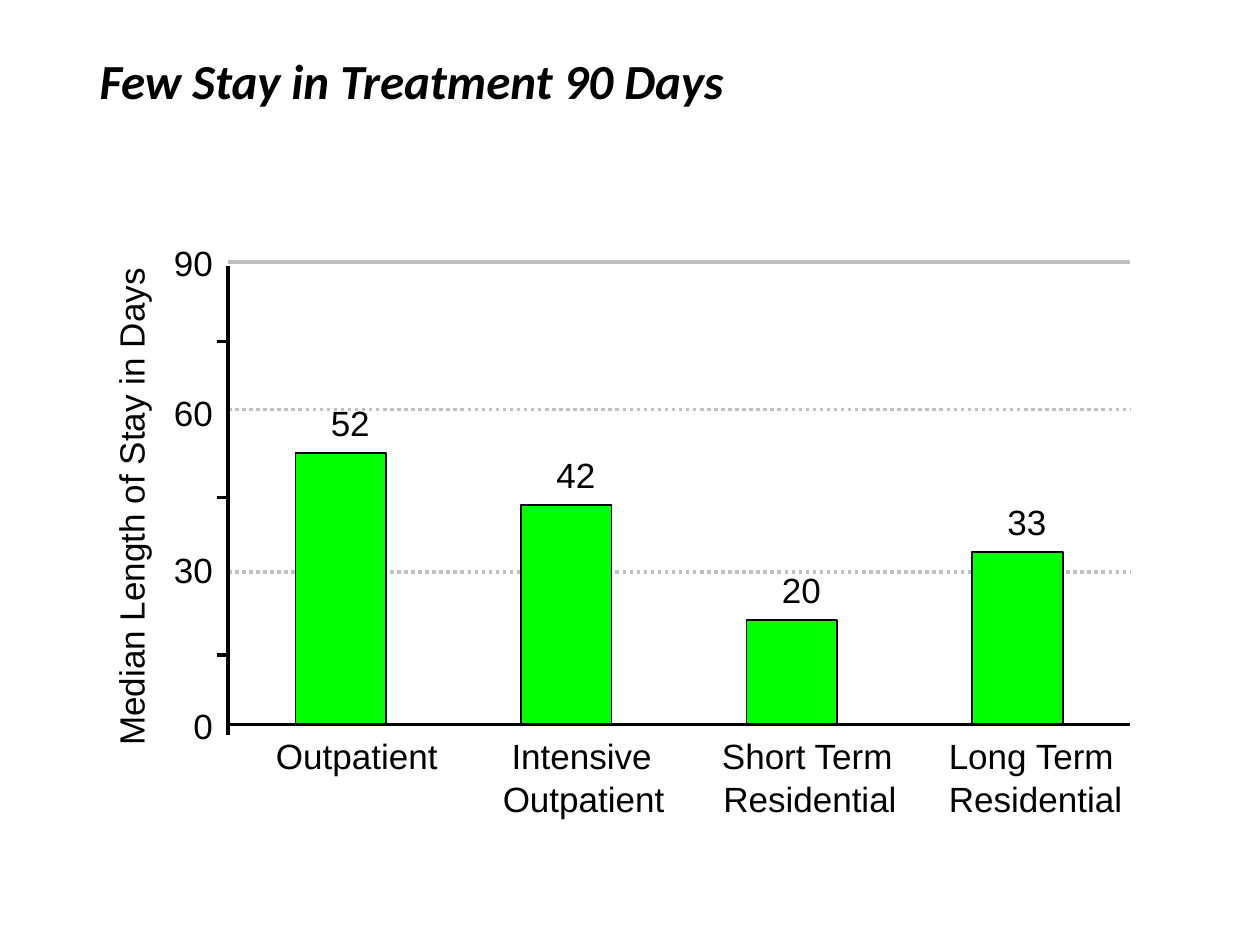
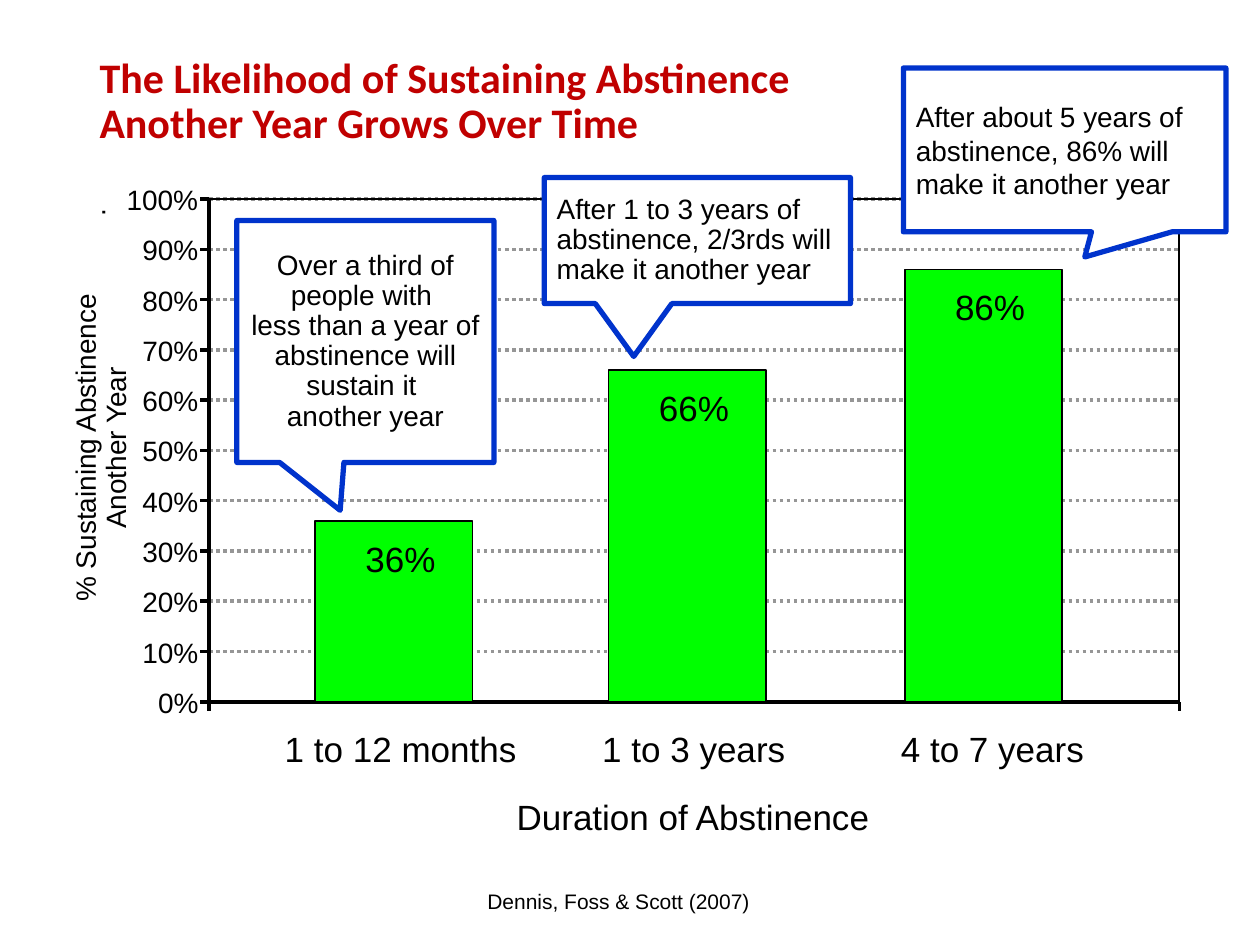
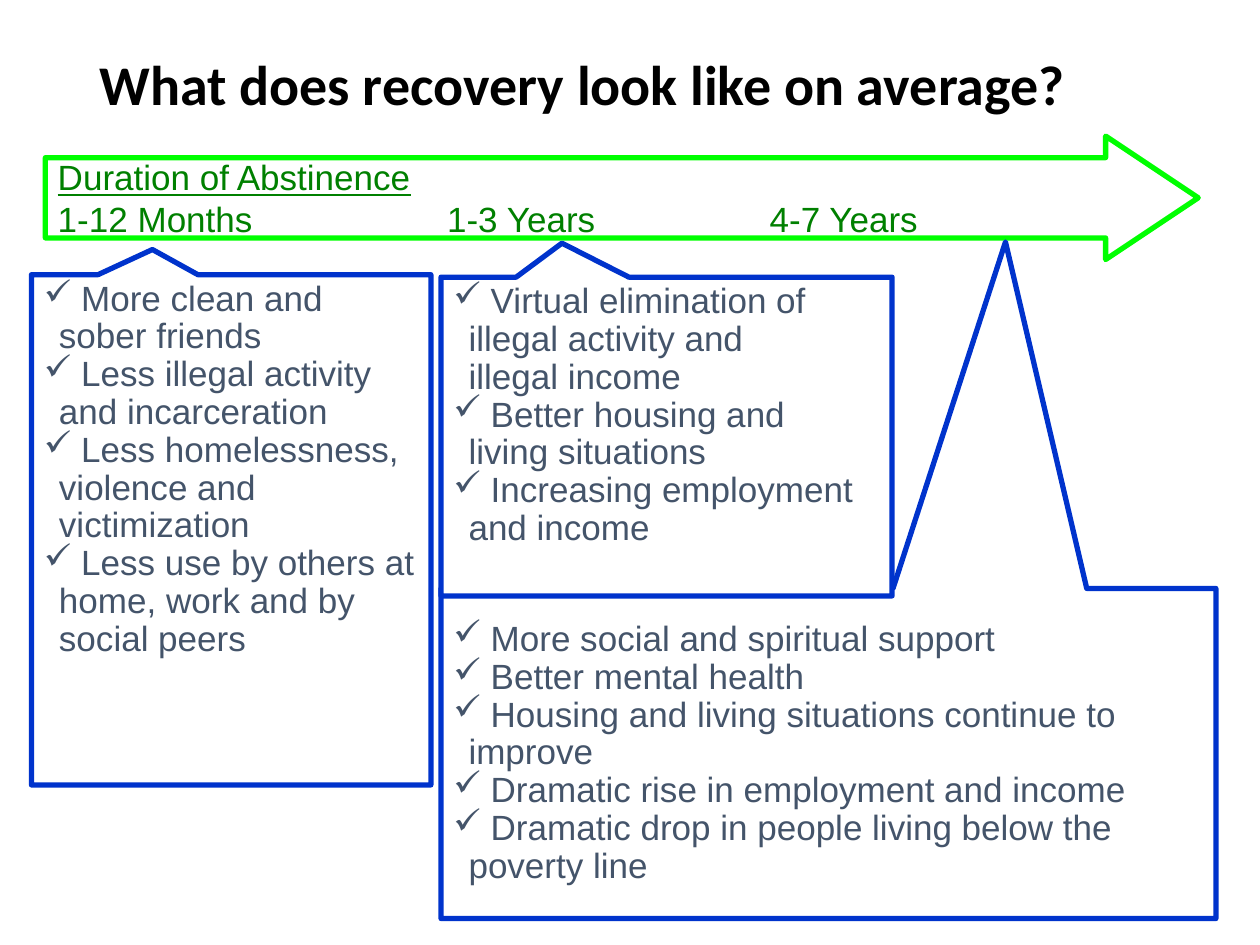
from lxml import etree
from pptx import Presentation
from pptx.dml.color import RGBColor
from pptx.enum.dml import MSO_LINE
from pptx.enum.shapes import MSO_CONNECTOR, MSO_SHAPE
from pptx.enum.text import MSO_ANCHOR, MSO_AUTO_SIZE, PP_ALIGN
from pptx.oxml.ns import qn
from pptx.util import Inches, Pt

COLORS = {
    "black": "000000", "white": "FFFFFF", "bar": "00FF00", "callout": "0033CC",
    "light_grid": "C0C0C0", "grid": "969696", "red": "C00000",
    "green_text": "008000", "slate": "44546A",
}
TITLE_BOX = (0.69, 0.4, 8.62, 1.45)
BODY_FONT = "Arial"
TITLE_FONT = "Calibri"

# Length of stay: left and right edge, baseline and height of the 90-day scale
STAY_PLOT = {"left": 1.81, "right": 8.97, "base": 5.75, "height": 3.73, "top": 2.11}
STAY_BAR_WIDTH = 0.72
STAY_GRID = [(4.54, True), (3.25, True), (2.08, False)]  # top, dotted
STAY_TICKS = [5.2, 3.95, 2.71]
STAY_SCALE = [("0", 5.59), ("30", 4.35), ("60", 3.11), ("90", 1.92)]
STAY_DAYS = [52, 42, 20, 33]
STAY_CATEGORIES = [  # one list per bar: text, left, width
    [("Outpatient", 2.19, 1.29)],
    [("Intensive", 4.06, 1.12), ("Outpatient", 3.99, 1.29)],
    [("Short Term", 5.73, 1.36), ("Residential", 5.74, 1.39)],
    [("Long Term", 7.53, 1.32), ("Residential", 7.53, 1.39)],
]

# Likelihood of abstinence
ODDS_PLOT = {"left": 1.66, "right": 9.36, "base": 5.57, "height": 3.99, "top": 1.58}
ODDS_BAR_WIDTH = 1.25
ODDS_BARS = [(36, 2.5), (66, 4.83), (86, 7.18)]  # percent, left
ODDS_LABELS = [
    ("1 to 12 months", 2.26, 5.77, 1.85),
    ("1 to 3 years", 4.78, 5.77, 1.46),
    ("4 to 7 years", 7.15, 5.77, 1.46),
    ("Duration of Abstinence", 4.1, 6.31, 2.82),
]
ODDS_CALLOUTS = [  # box, tail tip, paragraphs, alignment, line spacing
    ((4.32, 1.41, 2.43, 1), (5.03, 2.83),
     ["After 1 to 3 years of abstinence, 2/3rds will make it another year"],
     PP_ALIGN.LEFT, 0.9),
    ((7.17, 0.54, 2.56, 1.3), (8.61, 2.04),
     ["After about 5 years of abstinence, 86% will make it another year"],
     PP_ALIGN.LEFT, 1.0),
    ((1.88, 1.75, 2.04, 1.92), (2.7, 4.05),
     ["Over a third of people with ",
      "less than a year of abstinence will sustain it ", "another year"],
     PP_ALIGN.CENTER, 0.9),
]

# Recovery
DURATION_ARROW = (0.36, 1.08, 9.15, 0.98)
DURATION_TABS = (3.09, 5.65)
RECOVERY_CALLOUTS = [  # box, tail tip, anchor, bullets
    ((3.5, 4.67, 6.15, 2.62), (7.98, 1.92), MSO_ANCHOR.MIDDLE,
     ["More social and spiritual support", "Better mental health",
      "Housing and living situations continue to improve",
      "Dramatic rise in employment and income",
      "Dramatic drop in people living below the poverty line"]),
    ((3.5, 2.2, 3.58, 2.53), (4.46, 1.93), MSO_ANCHOR.TOP,
     ["Virtual elimination of\nillegal activity and\nillegal income",
      "Better housing and\nliving situations", "Increasing employment and income"]),
    ((0.25, 2.18, 3.17, 4.05), (1.21, 1.98), MSO_ANCHOR.TOP,
     ["More clean and sober friends", "Less illegal activity and incarceration",
      "Less homelessness,\nviolence and\nvictimization",
      "Less use by others at home, work and by social peers"]),
]


def color(name):
    return RGBColor.from_string(COLORS[name])


def inches(values):
    return [Inches(value) for value in values]


def add_text(paragraph, text, size, color_name="black", font=BODY_FONT,
             bold=False, italic=False, underline=False):
    for index, line in enumerate(text.split("\n")):
        if index:
            paragraph.add_line_break()
        run = paragraph.add_run()
        run.text = line
        run.font.name = font
        run.font.size = Pt(size)
        run.font.bold = bold
        run.font.italic = italic
        run.font.underline = underline
        run.font.color.rgb = color(color_name)


def add_paragraphs(frame, texts, size, color_name="black",
                   alignment=PP_ALIGN.LEFT, spacing=1.0):
    for index, text in enumerate(texts):
        paragraph = frame.add_paragraph() if index else frame.paragraphs[0]
        paragraph.alignment = alignment
        paragraph.line_spacing = spacing
        add_text(paragraph, text, size, color_name)


def add_titled_slide(presentation, text, size, color_name="black", italic=False):
    slide = presentation.slides.add_slide(presentation.slide_layouts[5])
    title = slide.shapes.title
    title.left, title.top, title.width, title.height = inches(TITLE_BOX)
    frame = title.text_frame
    frame.auto_size = MSO_AUTO_SIZE.NONE
    frame.vertical_anchor = MSO_ANCHOR.TOP
    paragraph = frame.paragraphs[0]
    paragraph.alignment = PP_ALIGN.LEFT
    paragraph.line_spacing = 0.9
    add_text(paragraph, text, size, color_name, TITLE_FONT, bold=True, italic=italic)
    return slide


def add_label(shapes, texts, box, size=20, rotation=0,
              alignment=PP_ALIGN.LEFT, spacing=1.0):
    """Add a text box without insets that fits its text."""
    label = shapes.add_textbox(*inches(box))
    label.rotation = rotation
    frame = label.text_frame
    frame.margin_left = frame.margin_right = frame.margin_top = frame.margin_bottom = 0
    frame.word_wrap = False
    frame.auto_size = MSO_AUTO_SIZE.SHAPE_TO_FIT_TEXT
    add_paragraphs(frame, texts, size, alignment=alignment, spacing=spacing)


def add_line(slide, start, end, color_name="black", dotted=False):
    line = slide.shapes.add_connector(MSO_CONNECTOR.STRAIGHT, *inches(start + end))
    line.line.color.rgb = color(color_name)
    line.line.width = Pt(0)
    if dotted:
        line.line.dash_style = MSO_LINE.ROUND_DOT
    etree.SubElement(line._element.spPr, qn("a:effectLst"))


def add_box(shapes, kind, box, fill, line, width):
    shape = shapes.add_shape(kind, *inches(box))
    shape.shadow.inherit = False
    if fill:
        shape.fill.solid()
        shape.fill.fore_color.rgb = color(fill)
    else:
        shape.fill.background()
    shape.line.color.rgb = color(line)
    shape.line.width = Pt(width)
    return shape


def add_callout(slide, box, tip, anchor):
    """Add a box whose tail ends at tip, and return its text frame."""
    callout = add_box(slide.shapes, MSO_SHAPE.RECTANGULAR_CALLOUT, box,
                      "white", "callout", 3)
    left, top, width, height = box
    callout.adjustments[0] = (tip[0] - left) / width - 0.5
    callout.adjustments[1] = (tip[1] - top) / height - 0.5
    callout.text_frame.word_wrap = True
    callout.text_frame.vertical_anchor = anchor
    return callout.text_frame


def set_tabs(paragraph, positions):
    tab_list = etree.SubElement(paragraph._p.get_or_add_pPr(), qn("a:tabLst"))
    for position in positions:
        etree.SubElement(tab_list, qn("a:tab"), pos=str(Inches(position)), algn="l")


def set_check_bullet(paragraph):
    properties = paragraph._p.get_or_add_pPr()
    properties.set("marL", str(Inches(0.12)))
    properties.set("indent", str(-Inches(0.12)))
    etree.SubElement(properties, qn("a:buChar"), char="✓")


def build_stay_slide(presentation):
    slide = add_titled_slide(presentation, "Few Stay in Treatment 90 Days", 28, italic=True)
    left, right, base = STAY_PLOT["left"], STAY_PLOT["right"], STAY_PLOT["base"]
    for top, dotted in STAY_GRID:
        add_line(slide, (left, top), (right, top), "light_grid", dotted)
    for top in STAY_TICKS:
        add_line(slide, (left - 0.09, top), (left, top))

    pitch = (right - left) / len(STAY_DAYS)
    for index, days in enumerate(STAY_DAYS):
        height = STAY_PLOT["height"] * days / 90
        bar_left = left + pitch * (index + 0.5) - STAY_BAR_WIDTH / 2
        add_box(slide.shapes, MSO_SHAPE.RECTANGLE,
                (bar_left, base - height, STAY_BAR_WIDTH, height), "bar", "black", 0.88)
        add_label(slide.shapes, [str(days)],
                  (bar_left + 0.28, base - height - 0.41, 0.31, 0.34))
    add_line(slide, (left, STAY_PLOT["top"]), (left, base + 0.08))
    add_line(slide, (left, base), (right, base))

    for text, top in STAY_SCALE:
        width = 0.155 * len(text)
        add_label(slide.shapes, [text], (1.69 - width, top, width, 0.34))
    for lines in STAY_CATEGORIES:
        for row, (text, label_left, width) in enumerate(lines):
            add_label(slide.shapes, [text], (label_left, 5.83 + 0.34 * row, width, 0.34))
    add_label(slide.shapes, ["Median Length of Stay in Days"],
              (-0.87, 3.84, 3.82, 0.34), rotation=270)


def build_odds_slide(presentation):
    slide = add_titled_slide(
        presentation,
        "The Likelihood of Sustaining Abstinence \nAnother Year Grows Over Time", 24, "red")
    left, right, base, plot_height, plot_top = (
        ODDS_PLOT[key] for key in ("left", "right", "base", "height", "top"))
    levels = [(percent, base - plot_height * percent / 100) for percent in range(0, 101, 10)]
    for _, top in levels[1:]:
        add_line(slide, (left, top), (right, top), "grid", dotted=True)
    add_box(slide.shapes, MSO_SHAPE.RECTANGLE,
            (left, plot_top, right - left, plot_height), None, "black", 1)
    add_line(slide, (left, plot_top), (left, base))
    add_line(slide, (left, base), (right, base))
    for edge in (left, right):
        add_line(slide, (edge, base + 0.07), (edge, base))
    for percent, top in levels:
        add_line(slide, (left - 0.07, top), (left, top))
        text = f"{percent}%"
        width = 0.2 + 0.125 * (len(text) - 1)
        add_label(slide.shapes, [text], (1.58 - width, top - 0.13, width, 0.27), 16)

    for percent, bar_left in ODDS_BARS:
        height = plot_height * percent / 100
        group = slide.shapes.add_group_shape()
        add_box(group.shapes, MSO_SHAPE.RECTANGLE,
                (bar_left, base - height, ODDS_BAR_WIDTH, height), "bar", "black", 1)
        add_label(group.shapes, [f"{percent}%"],
                  (bar_left + 0.4, base - height + 0.13, 0.56, 0.34))
    for text, label_left, top, width in ODDS_LABELS:
        add_label(slide.shapes, [text], (label_left, top, width, 0.34))
    add_label(slide.shapes, ["% Sustaining Abstinence", "Another Year"],
              (-0.42, 3.31, 2.47, 0.49), 16, 270, PP_ALIGN.CENTER, 0.9)
    add_label(slide.shapes, ["."], (0.72, 1.55, 0.06, 0.27), 16, 270)

    for box, tip, texts, alignment, spacing in ODDS_CALLOUTS:
        frame = add_callout(slide, box, tip, MSO_ANCHOR.MIDDLE)
        add_paragraphs(frame, texts, 16, alignment=alignment, spacing=spacing)
    citation = slide.shapes.add_textbox(*inches((3.77, 7, 3.4, 0.3))).text_frame
    citation.word_wrap = True
    add_paragraphs(citation, ["Dennis, Foss & Scott (2007)"], 12)


def build_recovery_slide(presentation):
    slide = add_titled_slide(presentation, "What does recovery look like on average?", 32)
    arrow = add_box(slide.shapes, MSO_SHAPE.RIGHT_ARROW, DURATION_ARROW, "white", "bar", 3)
    arrow.adjustments[0] = 0.65
    arrow.adjustments[1] = 0.75
    frame = arrow.text_frame
    frame.word_wrap = True
    frame.vertical_anchor = MSO_ANCHOR.MIDDLE
    heading, periods = frame.paragraphs[0], frame.add_paragraph()
    heading.alignment = periods.alignment = PP_ALIGN.LEFT
    add_text(heading, "Duration of Abstinence", 20, "green_text", underline=True)
    add_text(periods, "1-12 Months\t1-3 Years\t4-7 Years", 20, "green_text")
    set_tabs(periods, DURATION_TABS)

    for box, tip, anchor, bullets in RECOVERY_CALLOUTS:
        frame = add_callout(slide, box, tip, anchor)
        add_paragraphs(frame, [" " + bullet for bullet in bullets], 20, "slate", spacing=0.9)
        for paragraph in frame.paragraphs:
            set_check_bullet(paragraph)


def main():
    presentation = Presentation()
    presentation.slide_width = Inches(10)
    presentation.slide_height = Inches(7.5)
    build_stay_slide(presentation)
    build_odds_slide(presentation)
    build_recovery_slide(presentation)
    presentation.save("out.pptx")


if __name__ == "__main__":
    main()
